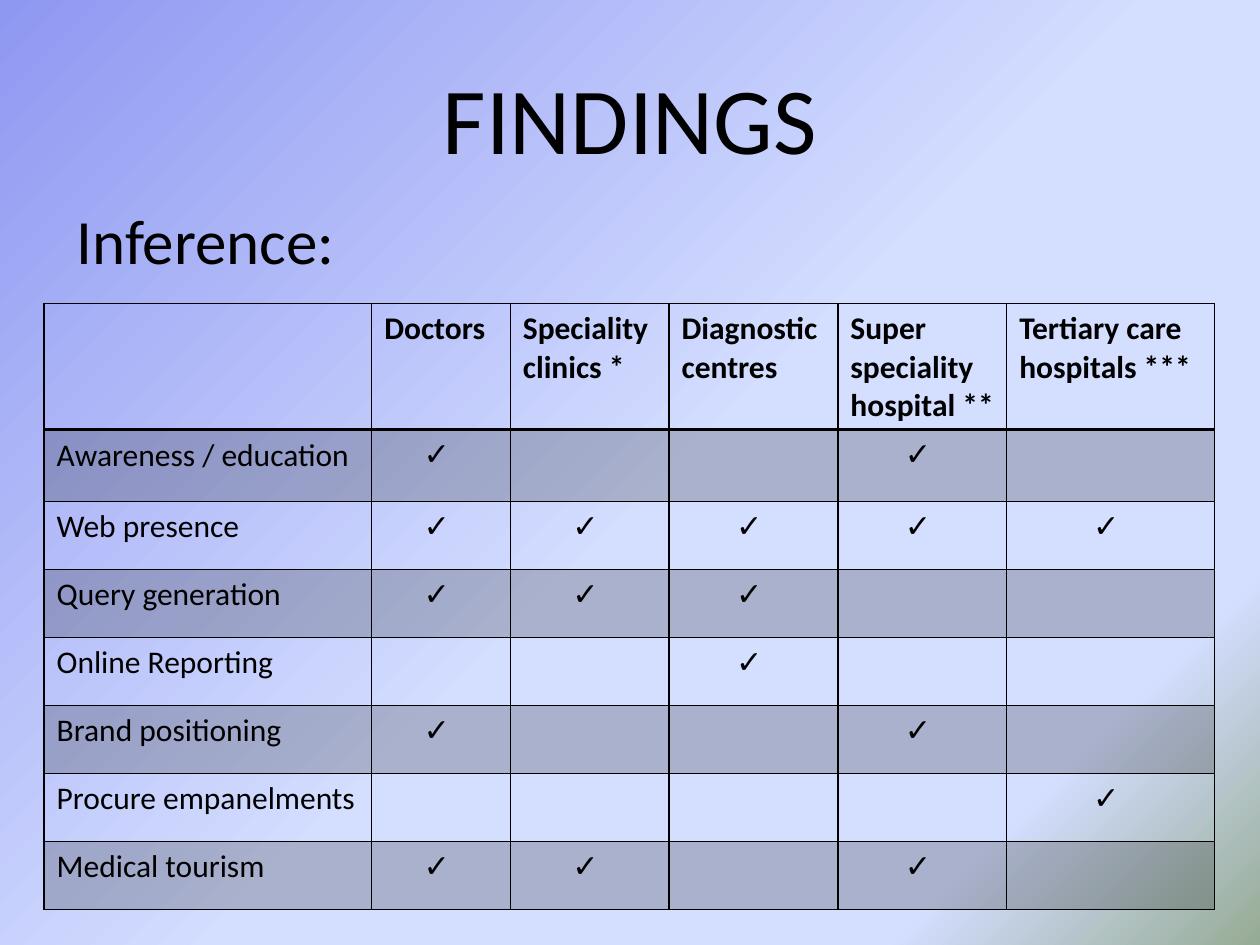
from pptx import Presentation
from pptx.dml.color import RGBColor
from pptx.enum.text import MSO_ANCHOR as Anchor, PP_ALIGN as Align
from pptx.oxml import parse_xml
from pptx.oxml.ns import nsdecls
from pptx.util import Inches, Pt

FONT = "Calibri"
BLACK = "000000"
CHECK = "✓"
BACKGROUND_STOPS = [(0, "8F98F1"), (53, "D4DEFF"), (83, "D4DEFF"), (100, "96AB94")]
COLUMN_WIDTHS = [2.6, 1.1, 1.26, 1.34, 1.34, 1.65]
ROW_HEIGHTS = [0.94, 0.57] + [0.54] * 6
CUSTOMERS = ["Doctors", "Speciality clinics *", "Diagnostic centres",
             "Super speciality hospital **", "Tertiary care hospitals ***"]
SERVICES = {
    "Awareness / education": [1, 0, 0, 1, 0],
    "Web presence": [1, 1, 1, 1, 1],
    "Query generation": [1, 1, 1, 0, 0],
    "Online Reporting": [0, 0, 1, 0, 0],
    "Brand positioning": [1, 0, 0, 1, 0],
    "Procure empanelments": [0, 0, 0, 0, 1],
    "Medical tourism": [1, 1, 0, 1, 0],
}


def rgb(color):
    """Turn a hex string into a colour."""
    return RGBColor.from_string(color)


def set_background(slide, stops, angle):
    """Give the slide a linear gradient with any number of stops."""
    stop_xml = "".join(
        f'<a:gs pos="{position * 1000}"><a:srgbClr val="{color}"/></a:gs>'
        for position, color in stops)
    slide.element.cSld.insert(0, parse_xml(
        f'<p:bg {nsdecls("p", "a")}><p:bgPr><a:gradFill rotWithShape="1">'
        f'<a:gsLst>{stop_xml}</a:gsLst><a:lin ang="{angle * 60000}" scaled="1"/>'
        f'</a:gradFill><a:effectLst/></p:bgPr></p:bg>'))


def write_text(text_frame, text, size, align=Align.LEFT, bold=False):
    """Write one paragraph and format its runs."""
    text_frame.text = text
    paragraph = text_frame.paragraphs[0]
    paragraph.alignment = align
    for run in paragraph.runs:
        run.font.name = FONT
        run.font.size = Pt(size)
        run.font.bold = bold
        run.font.color.rgb = rgb(BLACK)


def write_check(text_frame):
    """Show a centred check mark as the bullet of a blank line."""
    write_text(text_frame, " ", 18, Align.CENTER)
    properties = text_frame.paragraphs[0]._p.get_or_add_pPr()
    indent = Inches(0.22)
    properties.set("marL", str(indent))
    properties.set("indent", str(-indent))
    properties.append(parse_xml(f'<a:buFont {nsdecls("a")} typeface="{FONT}"/>'))
    properties.append(parse_xml(f'<a:buChar {nsdecls("a")} char="{CHECK}"/>'))


def add_text(slide, box, text, size, align=Align.LEFT, anchor=Anchor.TOP):
    """Add a wrapping text box."""
    text_frame = slide.shapes.add_textbox(*map(Inches, box)).text_frame
    text_frame.word_wrap = True
    text_frame.vertical_anchor = anchor
    write_text(text_frame, text, size, align)


def fill_cell(cell, shaded):
    """Shade a cell with translucent black or leave it clear."""
    if not shaded:
        cell.fill.background()
        return
    cell.fill.solid()
    cell.fill.fore_color.rgb = rgb(BLACK)
    color = cell.fill.fore_color._xFill[0]
    color.append(parse_xml(f'<a:alpha {nsdecls("a")} val="20000"/>'))


def set_borders(cell, top=1, bottom=1):
    """Draw the four borders of a cell, ahead of its fill."""
    properties = cell._tc.get_or_add_tcPr()
    widths = {"lnL": 1, "lnR": 1, "lnT": top, "lnB": bottom}
    for index, (side, width) in enumerate(widths.items()):
        properties.insert(index, parse_xml(
            f'<a:{side} {nsdecls("a")} w="{Pt(width)}"><a:solidFill>'
            f'<a:srgbClr val="{BLACK}"/></a:solidFill></a:{side}>'))


def add_findings_table(slide, left, top):
    """Add the table of services against customers."""
    rows = [["", *CUSTOMERS]]
    rows += [[service, *(CHECK if mark else "" for mark in marks)]
             for service, marks in SERVICES.items()]
    table = slide.shapes.add_table(
        len(rows), len(COLUMN_WIDTHS), Inches(left), Inches(top),
        Inches(sum(COLUMN_WIDTHS)), Inches(sum(ROW_HEIGHTS))).table
    for column, width in zip(table.columns, COLUMN_WIDTHS):
        column.width = Inches(width)
    for row, height in zip(table.rows, ROW_HEIGHTS):
        row.height = Inches(height)
    for row_index, texts in enumerate(rows):
        for column_index, text in enumerate(texts):
            cell = table.cell(row_index, column_index)
            is_header = row_index == 0
            if text == CHECK:
                write_check(cell.text_frame)
            else:
                write_text(cell.text_frame, text, 18, bold=is_header)
            fill_cell(cell, row_index % 2 == 1)
            set_borders(cell, 2 if row_index == 1 else 1, 2 if is_header else 1)


def main():
    """Build and save the findings slide."""
    presentation = Presentation()
    presentation.slide_width = Inches(10)
    presentation.slide_height = Inches(7.5)
    slide = presentation.slides.add_slide(presentation.slide_layouts[6])
    set_background(slide, BACKGROUND_STOPS, 45)
    add_text(slide, (0.5, 0.3, 9, 1.25), "FINDINGS", 54, Align.CENTER, Anchor.MIDDLE)
    add_text(slide, (0.51, 1.55, 9, 0.71), "Inference:", 36)
    add_findings_table(slide, 0.35, 2.41)
    presentation.save("out.pptx")


if __name__ == "__main__":
    main()
